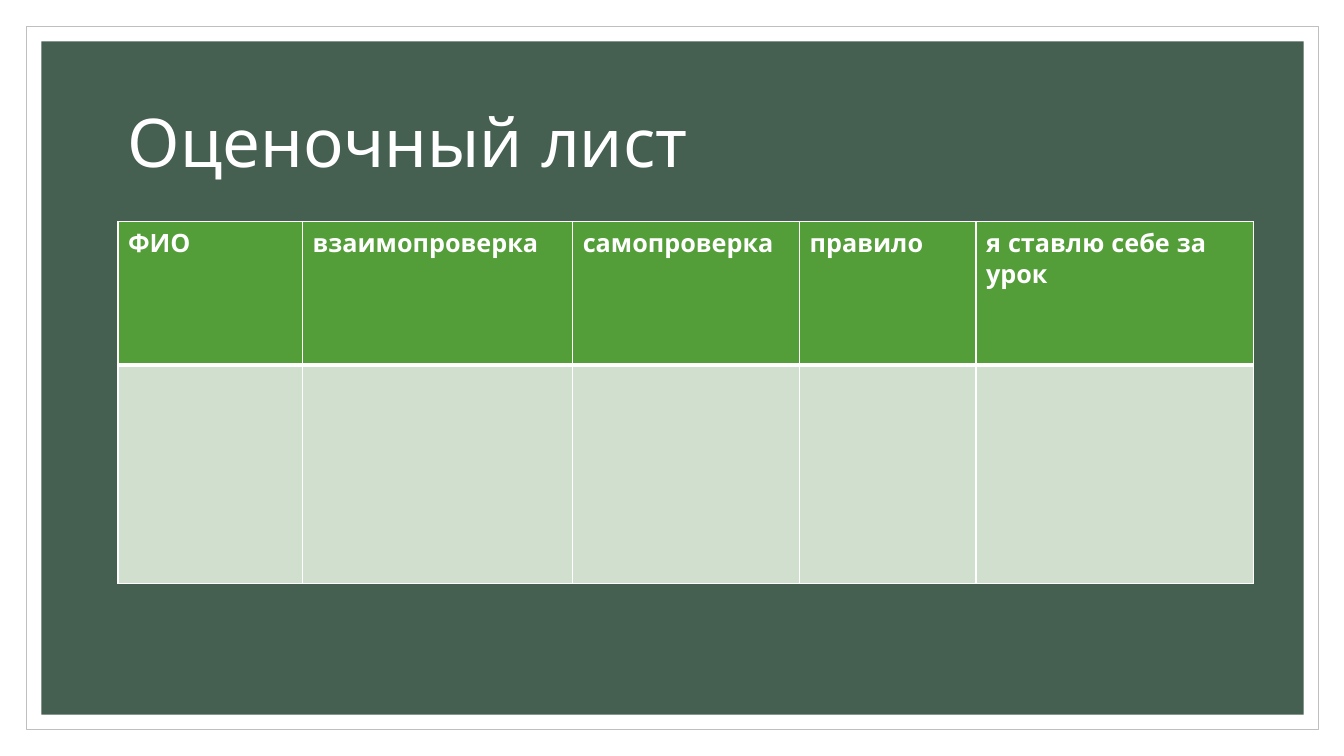
from pptx import Presentation
from pptx.dml.color import RGBColor
from pptx.enum.shapes import MSO_SHAPE as Shape
from pptx.enum.text import MSO_ANCHOR as Anchor
from pptx.oxml import parse_xml
from pptx.oxml.ns import nsdecls
from pptx.util import Inches, Pt

WHITE = RGBColor(0xFF, 0xFF, 0xFF)
GREY = RGBColor(0xBF, 0xBF, 0xBF)
DARK = RGBColor(0x45, 0x5F, 0x51)
GREEN = RGBColor(0x54, 0x9E, 0x39)
PALE = RGBColor(0xD1, 0xDF, 0xCE)
FONT = "Quicksand"
HEADS = ["ФИО", "взаимопроверка", "самопроверка", "правило", "я ставлю себе за урок"]
COLS = [1.83, 2.68, 2.25, 1.75, 2.75]
ROWS = [1.42, 2.17]


def style(par, size, bold=False):
    """Format the runs of a paragraph in white."""
    for run in par.runs:
        run.font.name = FONT
        run.font.size = Pt(size)
        run.font.bold = bold
        run.font.color.rgb = WHITE


def add_rect(slide, box, fill, line=None):
    """Draw a plain rectangle in the box."""
    rect = slide.shapes.add_shape(Shape.RECTANGLE, *map(Inches, box))
    rect.shadow.inherit = False
    rect.fill.solid()
    rect.fill.fore_color.rgb = fill
    if line is None:
        rect.line.fill.background()
    else:
        rect.line.color.rgb = line
        rect.line.width = Pt(0.5)


def add_frame(slide, box, gap=0.15):
    """Draw the thin outer frame and the dark panel inside it."""
    left, top, width, height = box
    add_rect(slide, box, WHITE, GREY)
    inner = (left + gap, top + gap, width - 2 * gap, height - 2 * gap)
    add_rect(slide, inner, DARK)


def add_title(slide, box, text):
    """Write the slide title in the box."""
    frame = slide.shapes.add_textbox(*map(Inches, box)).text_frame
    frame.word_wrap = True
    frame.vertical_anchor = Anchor.MIDDLE
    frame.text = text
    par = frame.paragraphs[0]
    par.line_spacing = 0.9
    style(par, 48)


def set_edges(cell, top, bottom):
    """Give a cell white borders, with top and bottom widths in points."""
    props = cell._tc.get_or_add_tcPr()
    sides = [("lnL", 1), ("lnR", 1), ("lnT", top), ("lnB", bottom)]
    for spot, (tag, width) in enumerate(sides):
        props.insert(spot, parse_xml(
            f'<a:{tag} {nsdecls("a")} w="{Pt(width)}"><a:solidFill>'
            f'<a:srgbClr val="{WHITE}"/></a:solidFill></a:{tag}>'))


def add_sheet(slide, left, top):
    """Build the score sheet with its head row and one empty row."""
    size = (left, top, sum(COLS), sum(ROWS))
    table = slide.shapes.add_table(len(ROWS), len(COLS), *map(Inches, size)).table
    for row, height in zip(table.rows, ROWS):
        row.height = Inches(height)
    for col, width in zip(table.columns, COLS):
        col.width = Inches(width)
    looks = [(HEADS, GREEN, 1, 3), ([""] * len(COLS), PALE, 3, 1)]
    for row, (texts, fill, upper, lower) in zip(table.rows, looks):
        for cell, text in zip(row.cells, texts):
            cell.text_frame.text = text
            style(cell.text_frame.paragraphs[0], 18, True)
            cell.fill.solid()
            cell.fill.fore_color.rgb = fill
            set_edges(cell, upper, lower)


def main():
    """Build the slide and save it."""
    deck = Presentation()
    deck.slide_width, deck.slide_height = Inches(13.33), Inches(7.5)
    slide = deck.slides.add_slide(deck.slide_layouts[6])
    add_frame(slide, (0.26, 0.26, 12.82, 6.98))
    add_title(slide, (1.17, 0.7, 11, 1.5), "Оценочный лист")
    add_sheet(slide, 1.17, 2.2)
    deck.save("out.pptx")


if __name__ == "__main__":
    main()
